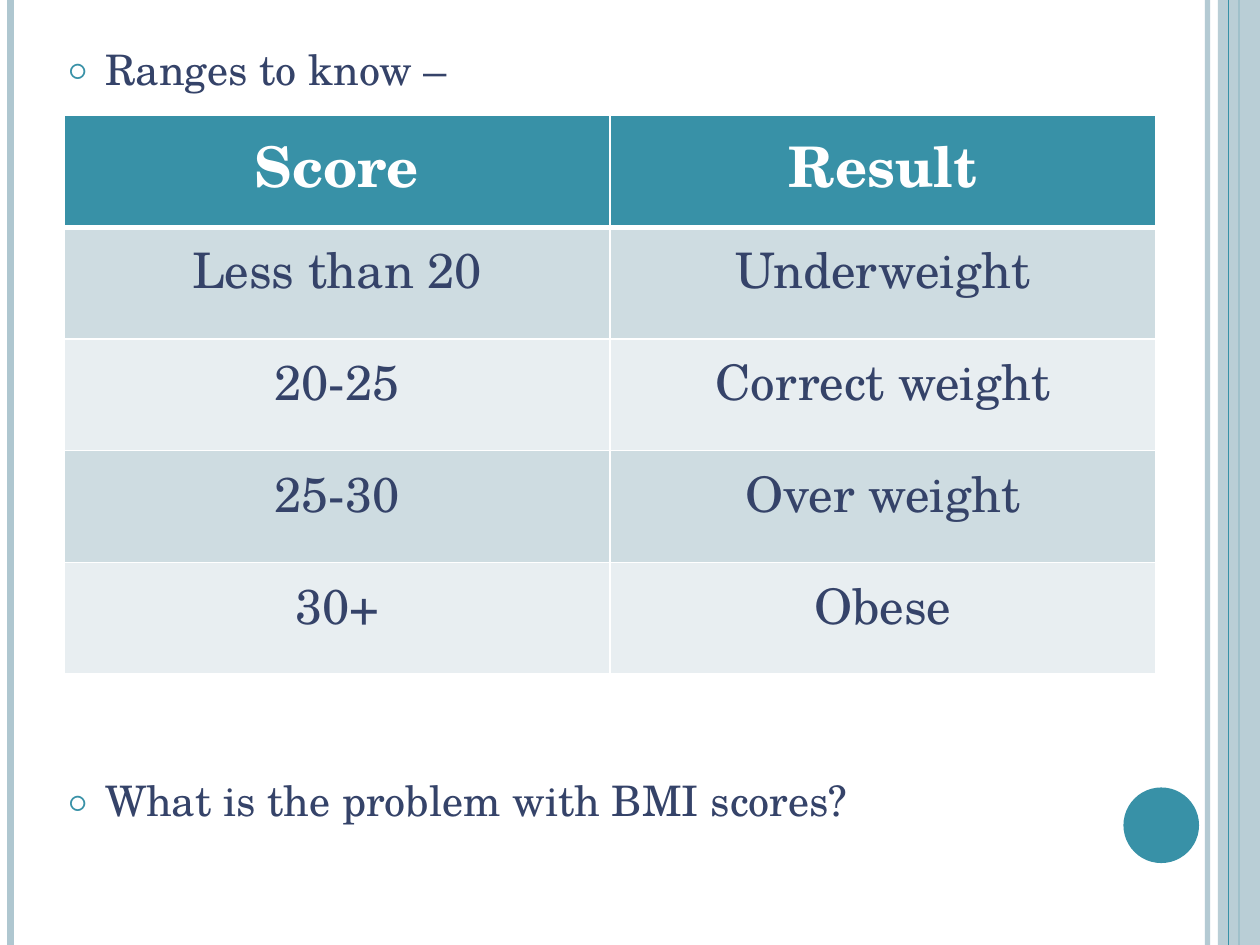
"""Build the slide of BMI score ranges, with a table between two bullets."""
from dataclasses import dataclass

from lxml import etree
from pptx import Presentation
from pptx import util as u
from pptx.dml.color import RGBColor
from pptx.enum import shapes, text
from pptx.oxml.ns import qn


@dataclass(frozen=True)
class Theme:
    font: str = "TeX Gyre Schola"
    ink: str = "354369"
    teal: str = "3891A7"
    mist: str = "AFC7D0"
    white: str = "FFFFFF"
    bands: tuple = ("CEDCE1", "E8EEF1")
    bullet_size: int = 24
    header_size: int = 32
    cell_size: int = 28


def paint(fill, color, opacity=100):
    """Give a fill one solid colour, see-through below 100 percent."""
    fill.solid()
    fill.fore_color.rgb = RGBColor.from_string(color)
    if opacity < 100:
        solid = fill._xPr.find(qn("a:solidFill"))
        etree.SubElement(solid[0], qn("a:alpha"), val=str(opacity * 1000))


def style(paragraph, size, color, bold=False):
    """Set the font of a whole paragraph."""
    font = paragraph.font
    font.name, font.size, font.bold = theme.font, u.Pt(size), bold
    font.color.rgb = RGBColor.from_string(color)


theme = Theme()
deck = Presentation()
deck.slide_width, deck.slide_height = u.Inches(10), u.Inches(7.5)
unit = deck.slide_width / 120
page = deck.slides.add_slide(deck.slide_layouts[1])
title = page.shapes.title
title.element.getparent().remove(title.element)
body = page.placeholders[1]

rails = [
    (115, theme.mist, 3, 93),
    (1, theme.mist, 4.5, 100),
    (118, theme.teal, 1.5, 100),
    (117, theme.teal, 0.75, 100),
]
blocks = [
    (shapes.MSO_SHAPE.RECTANGLE, (116, 0, 4, 90), theme.mist, 87),
    (shapes.MSO_SHAPE.OVAL, (107, 75, 7.2, 7.2), theme.teal, 100),
]
rail_lines = []
for column, color, width, opacity in rails:
    x = int(column * unit)
    rail = page.shapes.add_connector(
        shapes.MSO_CONNECTOR.STRAIGHT, x, 0, x, deck.slide_height)
    rail.line.width = u.Pt(width)
    paint(rail.line.fill, color, opacity)
    etree.SubElement(rail.element.spPr, qn("a:effectLst"))
    rail_lines.append(rail)
for kind, place, color, opacity in blocks:
    block = page.shapes.add_shape(kind, *(int(part * unit) for part in place))
    block.shadow.inherit = False
    block.line.fill.background()
    paint(block.fill, color, opacity)
    if kind == shapes.MSO_SHAPE.RECTANGLE:
        block.element.addnext(rail_lines[-1].element)

body.left, body.top, body.width, body.height = (
    int(part * unit) for part in (5.2, 3.5, 98, 64))
frame = body.text_frame
frame.text = "Ranges to know –\nWhat is the problem with BMI scores?"
frame.auto_size = text.MSO_AUTO_SIZE.NONE
frame.vertical_anchor = text.MSO_ANCHOR.TOP
for para, gap in zip(frame.paragraphs, (6, 389)):
    style(para, theme.bullet_size, theme.ink)
    para.space_before = u.Pt(gap)
    settings = para._p.get_or_add_pPr()
    settings.set("marL", str(u.Inches(0.3)))
    settings.set("indent", str(-u.Inches(0.3)))
    bullet_color = etree.Element(qn("a:buClr"))
    etree.SubElement(bullet_color, qn("a:srgbClr"), val=theme.teal)
    bullet = [
        bullet_color,
        etree.Element(qn("a:buSzPct"), val="70000"),
        etree.Element(qn("a:buFont"), typeface=theme.font),
        etree.Element(qn("a:buChar"), char="○"),
    ]
    spot = settings.index(settings.find(qn("a:spcBef"))) + 1
    settings[spot:spot] = bullet

ranges = [
    ("Score", "Result"),
    ("Less than 20", "Underweight"),
    ("20-25", "Correct weight"),
    ("25-30", "Over weight"),
    ("30+", "Obese"),
]
place = (int(part * unit) for part in (6.1, 11, 104, 53.2))
table = page.shapes.add_table(len(ranges), 2, *place).table
for row, values in enumerate(ranges):
    header = row == 0
    for column, value in enumerate(values):
        cell = table.cell(row, column)
        cell.text = value
        para = cell.text_frame.paragraphs[0]
        para.alignment = text.PP_ALIGN.CENTER
        if header:
            style(para, theme.header_size, theme.white, bold=True)
        else:
            style(para, theme.cell_size, theme.ink)
        borders = cell._tc.get_or_add_tcPr()
        for side in ("lnL", "lnR", "lnT", "lnB"):
            thick = (header and side == "lnB") or (row == 1 and side == "lnT")
            border = etree.SubElement(
                borders, qn(f"a:{side}"), w=str(u.Pt(3 if thick else 1)))
            solid = etree.SubElement(border, qn("a:solidFill"))
            etree.SubElement(solid, qn("a:srgbClr"), val=theme.white)
        paint(cell.fill, theme.teal if header else theme.bands[(row - 1) % 2])

deck.save("out.pptx")
